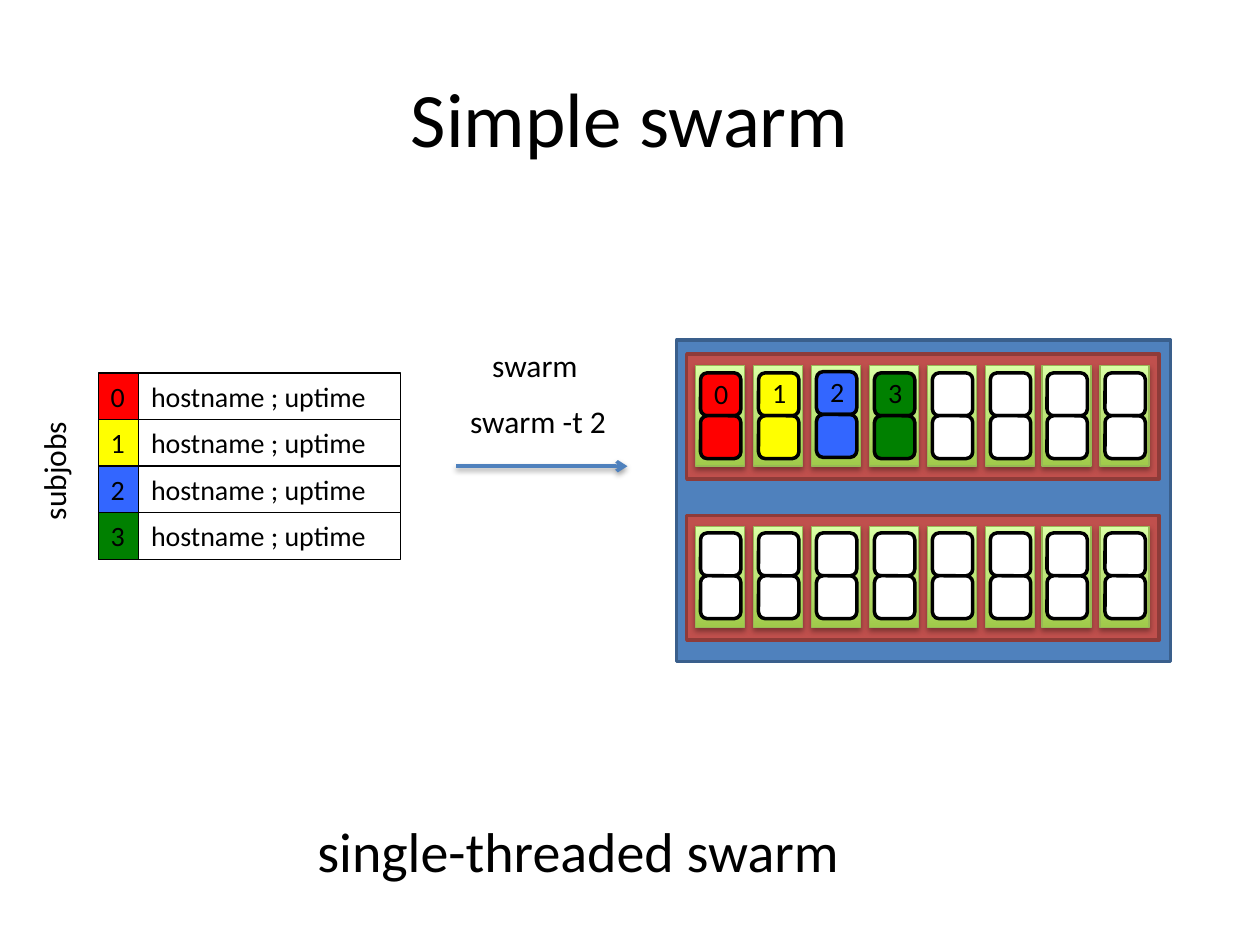
import pptx
import pptx.util
import pptx.oxml
from pptx.dml.color import RGBColor
from pptx.enum.dml import MSO_THEME_COLOR
from pptx.enum.shapes import MSO_CONNECTOR, MSO_SHAPE
from pptx.enum.text import MSO_ANCHOR, MSO_AUTO_SIZE, PP_ALIGN
from pptx.oxml.ns import nsdecls, qn

PX = 9144  # 100 px to the inch
BLACK = RGBColor(0x00, 0x00, 0x00)
WHITE = RGBColor(0xFF, 0xFF, 0xFF)
RED = RGBColor(0xFF, 0x00, 0x00)
YELLOW = RGBColor(0xFF, 0xFF, 0x00)
BLUE = RGBColor(0x33, 0x66, 0xFF)
GREEN = RGBColor(0x00, 0x80, 0x00)
NODE_FILL = RGBColor(0x4F, 0x81, 0xBD)
NODE_LINE = RGBColor(0x3A, 0x5F, 0x8C)
SOCKET_FILL = RGBColor(0xC0, 0x50, 0x4D)
SOCKET_LINE = RGBColor(0x8E, 0x3B, 0x39)
CORE_DARK = RGBColor(0xA0, 0xCA, 0x4A)
CORE_LIGHT = RGBColor(0xDA, 0xFF, 0xA5)
CORE_LINE = RGBColor(0x98, 0xB9, 0x55)
SUBJOB_COLORS = [RED, YELLOW, BLUE, GREEN]
SHADOW = (
    '<a:outerShdw %s blurRad="40000" dist="%d" dir="5400000" rotWithShape="0">'
    '<a:srgbClr val="000000"><a:alpha val="%d"/></a:srgbClr></a:outerShdw>'
)

presentation = pptx.Presentation()
presentation.slide_width = 1000 * PX
presentation.slide_height = 750 * PX
slide = presentation.slides.add_slide(presentation.slide_layouts[6])


def add_box(kind, left, top, width, height, fill, line, line_width):
    shape = slide.shapes.add_shape(kind, left * PX, top * PX, width * PX, height * PX)
    shape.shadow.inherit = False
    shape.fill.solid()
    shape.fill.fore_color.rgb = fill
    shape.line.color.rgb = line
    shape.line.width = pptx.util.Pt(line_width)
    return shape


def add_label(text, left, top, width, height, size, align=PP_ALIGN.LEFT, wrap=False):
    label = slide.shapes.add_textbox(left * PX, top * PX, width * PX, height * PX)
    label.text_frame.text = text
    label.text_frame.word_wrap = wrap
    label.text_frame.auto_size = MSO_AUTO_SIZE.SHAPE_TO_FIT_TEXT
    paragraph = label.text_frame.paragraphs[0]
    paragraph.alignment = align
    font = paragraph.runs[0].font
    font.name = "Calibri"
    font.size = pptx.util.Pt(size)
    font.color.rgb = BLACK
    return label


# Arrow from the subjobs to the node
arrow = slide.shapes.add_connector(
    MSO_CONNECTOR.STRAIGHT, 362 * PX, 370 * PX, 498 * PX, 370 * PX)
arrow.line.color.rgb = NODE_FILL
arrow.line.width = pptx.util.Pt(2)
arrow.line._get_or_add_ln().append(
    pptx.oxml.parse_xml('<a:tailEnd %s type="arrow"/>' % nsdecls("a")))
arrow_effects = pptx.oxml.parse_xml("<a:effectLst %s/>" % nsdecls("a"))
arrow_effects.append(pptx.oxml.parse_xml(SHADOW % (nsdecls("a"), 20000, 38000)))
arrow._element.spPr.append(arrow_effects)

# Captions
add_label("subjobs", -7, 353, 99, 40, 18).rotation = 270
add_label("swarm", 380, 270, 89, 40, 18, PP_ALIGN.CENTER)
add_label("swarm -t 2", 362, 314, 130, 40, 18, PP_ALIGN.CENTER)

# Subjob list: numbered colour cell and command
for row, color in enumerate(SUBJOB_COLORS):
    top = 296 + 37 * row
    number = add_label(str(row), 78, top, 32, 37, 16)
    number.fill.solid()
    number.fill.fore_color.rgb = color
    command = add_label("hostname ; uptime", 110, top, 208, 37, 16, wrap=True)
    for cell in (number, command):
        cell.line.color.rgb = BLACK
        cell.line.width = pptx.util.Pt(0.75)

# Node with two sockets of eight cores, two hyperthreads per core
add_box(MSO_SHAPE.RECTANGLE, 537, 270, 392, 255, NODE_FILL, NODE_LINE, 2)
for socket, socket_top in enumerate((281, 409)):
    add_box(MSO_SHAPE.RECTANGLE, 545, socket_top, 375, 99, SOCKET_FILL, SOCKET_LINE, 2)
    for column in range(8):
        left = 552 + round(45.9 * column)
        core = add_box(MSO_SHAPE.RECTANGLE, left, socket_top + 9, 39, 80,
                       CORE_DARK, CORE_LINE, 0.75)
        core.fill.gradient()
        core.fill.gradient_angle = 90
        for stop, color in zip(core.fill.gradient_stops, (CORE_DARK, CORE_LIGHT)):
            stop.color.rgb = color
        for position, stop in enumerate(core.fill.gradient_stops):
            stop.position = position
        core._element.spPr.find(qn("a:effectLst")).append(
            pptx.oxml.parse_xml(SHADOW % (nsdecls("a"), 23000, 35000)))

        busy = socket == 0 and column < len(SUBJOB_COLORS)
        thread_fill = SUBJOB_COLORS[column] if busy else WHITE
        thread_top = socket_top + (15 if socket == 0 else 14)
        if thread_fill == BLUE:
            thread_top -= 1
        for offset in (0, 34):
            add_box(MSO_SHAPE.ROUNDED_RECTANGLE, left + 4, thread_top + offset,
                    32, 34, thread_fill, BLACK, 2)
        if busy:
            number_top = (294, 293, 292, 293)[column]
            add_label(str(column), left + 5, number_top, 32, 37, 16)

# Title and footer caption
title = add_label("Simple swarm", 50, 30, 900, 125, 44, PP_ALIGN.CENTER, True)
title.text_frame.auto_size = MSO_AUTO_SIZE.NONE
title.text_frame.vertical_anchor = MSO_ANCHOR.MIDDLE
add_label("single-threaded swarm", 242, 643, 436, 64, 32)

presentation.save("out.pptx")
